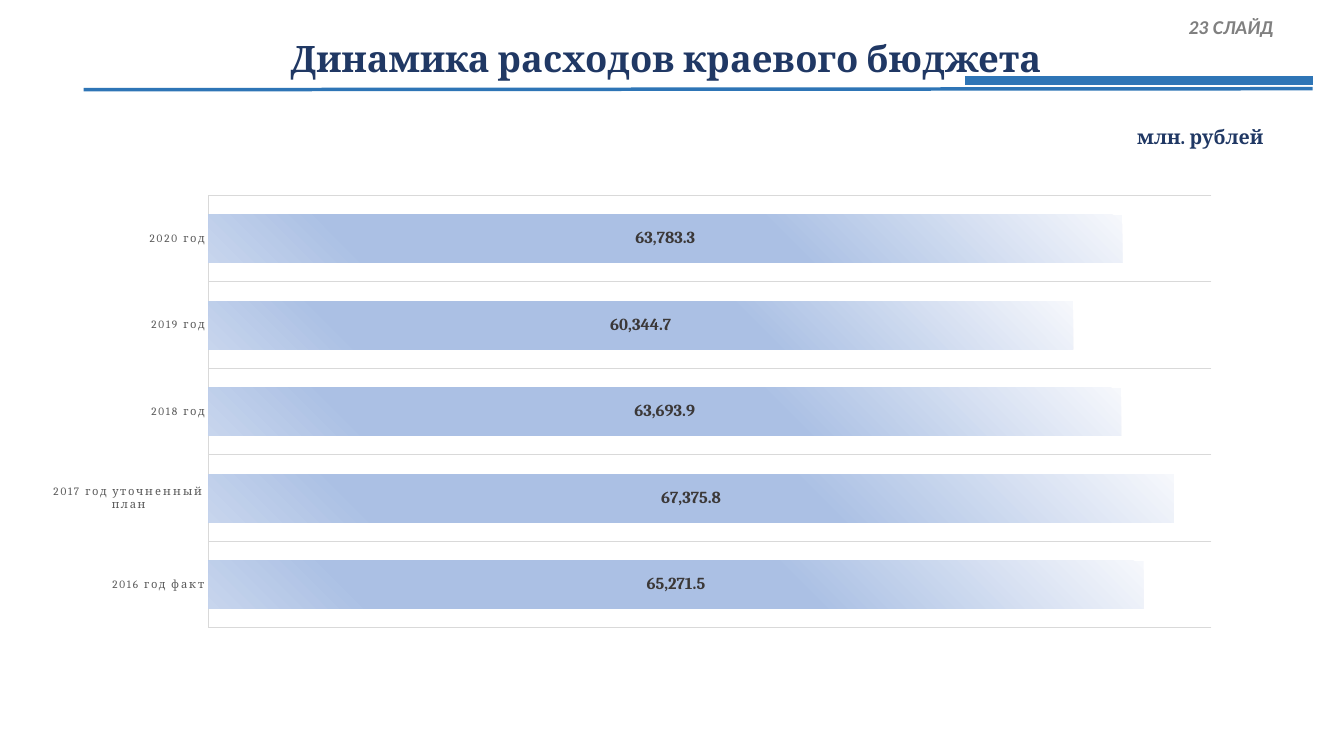
import pptx
import pptx.chart.data
import pptx.dml.color
import pptx.enum.chart
import pptx.enum.shapes
import pptx.enum.text
import pptx.oxml
import pptx.oxml.ns
import pptx.util
from pptx.util import Inches

COLORS = {
    "navy": "203864",
    "blue": "2E75B6",
    "gray": "808080",
    "axis_text": "595959",
    "grid": "D9D9D9",
    "label": "3B3838",
}
BAR_GRADIENT = [(0, "F6F8FC"), (38, "ABC0E4"), (83, "ABC0E4"), (100, "C7D5ED")]
EXPENSES = {
    "2016 год факт": 65271.5,
    "2017 год уточненный план": 67375.8,
    "2018 год": 63693.9,
    "2019 год": 60344.7,
    "2020 год": 63783.3,
}
ALIGN = pptx.enum.text.PP_ALIGN
qn = pptx.oxml.ns.qn


def style_font(font, name, size, color, bold=False, italic=False):
    font.name = name
    font.size = pptx.util.Pt(size)
    font.bold = bold
    font.italic = italic
    font.color.rgb = pptx.dml.color.RGBColor.from_string(COLORS[color])


def style_line(line, color, width):
    line.color.rgb = pptx.dml.color.RGBColor.from_string(COLORS[color])
    line.width = pptx.util.Pt(width)


presentation = pptx.Presentation()
presentation.slide_width = Inches(13.33)
presentation.slide_height = Inches(7.5)
slide = presentation.slides.add_slide(presentation.slide_layouts[5])

# Title
title = slide.shapes.title
title.left, title.top = Inches(2.11), Inches(0.27)
title.width, title.height = Inches(9), Inches(0.66)
title.text_frame.vertical_anchor = pptx.enum.text.MSO_ANCHOR.MIDDLE
heading = title.text_frame.paragraphs[0]
heading.alignment = ALIGN.CENTER
heading.line_spacing = 0.9
heading_run = heading.add_run()
heading_run.text = "Динамика расходов краевого бюджета"
style_font(heading_run.font, "Cambria", 26, "navy", bold=True)

# Expense chart
expense_data = pptx.chart.data.CategoryChartData(number_format="#,##0.0")
expense_data.categories = list(EXPENSES)
expense_data.add_series("Расходы", list(EXPENSES.values()))
chart = slide.shapes.add_chart(
    pptx.enum.chart.XL_CHART_TYPE.BAR_STACKED,
    Inches(0.53), Inches(1.41), Inches(11.49), Inches(5.76), expense_data,
).chart
chart.has_legend = False
chart.has_title = False
chart.font.name = "Calibri"
chart.font.size = pptx.util.Pt(10)

years = chart.category_axis
years.major_tick_mark = pptx.enum.chart.XL_TICK_MARK.NONE
years.has_major_gridlines = True
style_line(years.major_gridlines.format.line, "grid", 0.75)
style_line(years.format.line, "grid", 0.75)
style_font(years.tick_labels.font, "Cambria", 8, "axis_text")
for properties in years._element.iter(qn("a:defRPr")):
    properties.set("spc", "120")

amounts = chart.value_axis
amounts.visible = False
amounts.has_major_gridlines = False
amounts.minimum_scale, amounts.maximum_scale = 0, 70000
amounts.major_unit = 10000

# Bars and their labels
plot = chart.plots[0]
plot.gap_width = 79
plot.overlap = 100
plot.vary_by_categories = False
plot.has_data_labels = True
labels = plot.data_labels
labels.show_value = True
labels.number_format = "#,##0.0"
labels.number_format_is_linked = False
labels.position = pptx.enum.chart.XL_LABEL_POSITION.CENTER
style_font(labels.font, "Cambria", 12, "label", bold=True)

bar_fill = plot.series[0].format.fill
bar_fill.gradient()
gradient = plot.series[0]._element.find(".//" + qn("a:gradFill"))
stops = "".join(
    f'<a:gs pos="{position * 1000}"><a:srgbClr val="{color}"/></a:gs>'
    for position, color in BAR_GRADIENT
)
gradient.getparent().replace(gradient, pptx.oxml.parse_xml(
    f'<a:gradFill {pptx.oxml.ns.nsdecls("a")} rotWithShape="1"><a:gsLst>{stops}</a:gsLst>'
    '<a:lin ang="8100000" scaled="0"/></a:gradFill>'
))

# Inner plot area as fractions of the chart
plot_area = chart._chartSpace.chart.plotArea
for old_layout in plot_area.findall(qn("c:layout")):
    plot_area.remove(old_layout)
bounds = "".join(
    f'<c:{side} val="{value}"/>'
    for side, value in [("x", 0.133), ("y", 0.092), ("w", 0.867), ("h", 0.745)]
)
plot_area.insert(0, pptx.oxml.parse_xml(
    f'<c:layout {pptx.oxml.ns.nsdecls("c")}><c:manualLayout><c:layoutTarget val="inner"/>'
    f'<c:xMode val="edge"/><c:yMode val="edge"/>{bounds}</c:manualLayout></c:layout>'
))

# Slide number and unit captions
for text, left, top, width, align, font_name, color, italic in [
    ("23 СЛАЙД", 11.69, 0.1, 1.1, ALIGN.LEFT, "Calibri", "gray", True),
    ("млн. рублей", 10.9, 1.19, 1.73, ALIGN.RIGHT, "Cambria", "navy", False),
]:
    caption = slide.shapes.add_textbox(
        Inches(left), Inches(top), Inches(width), Inches(0.34)
    ).text_frame
    caption.word_wrap = True
    caption.paragraphs[0].alignment = align
    caption_run = caption.paragraphs[0].add_run()
    caption_run.text = text
    style_font(caption_run.font, font_name, 14, color, bold=True, italic=italic)

# Rules under the title
for start_x, start_y, end_y, weight in [(0.83, 0.89, 0.88, 2.5), (9.57, 0.8, 0.8, 6)]:
    rule = slide.shapes.add_connector(
        pptx.enum.shapes.MSO_CONNECTOR.STRAIGHT,
        Inches(start_x), Inches(start_y), Inches(13.02), Inches(end_y),
    )
    style_line(rule.line, "blue", weight)
    rule._element.spPr.append(pptx.oxml.parse_xml(
        f'<a:effectLst {pptx.oxml.ns.nsdecls("a")}/>'
    ))

presentation.save("out.pptx")
